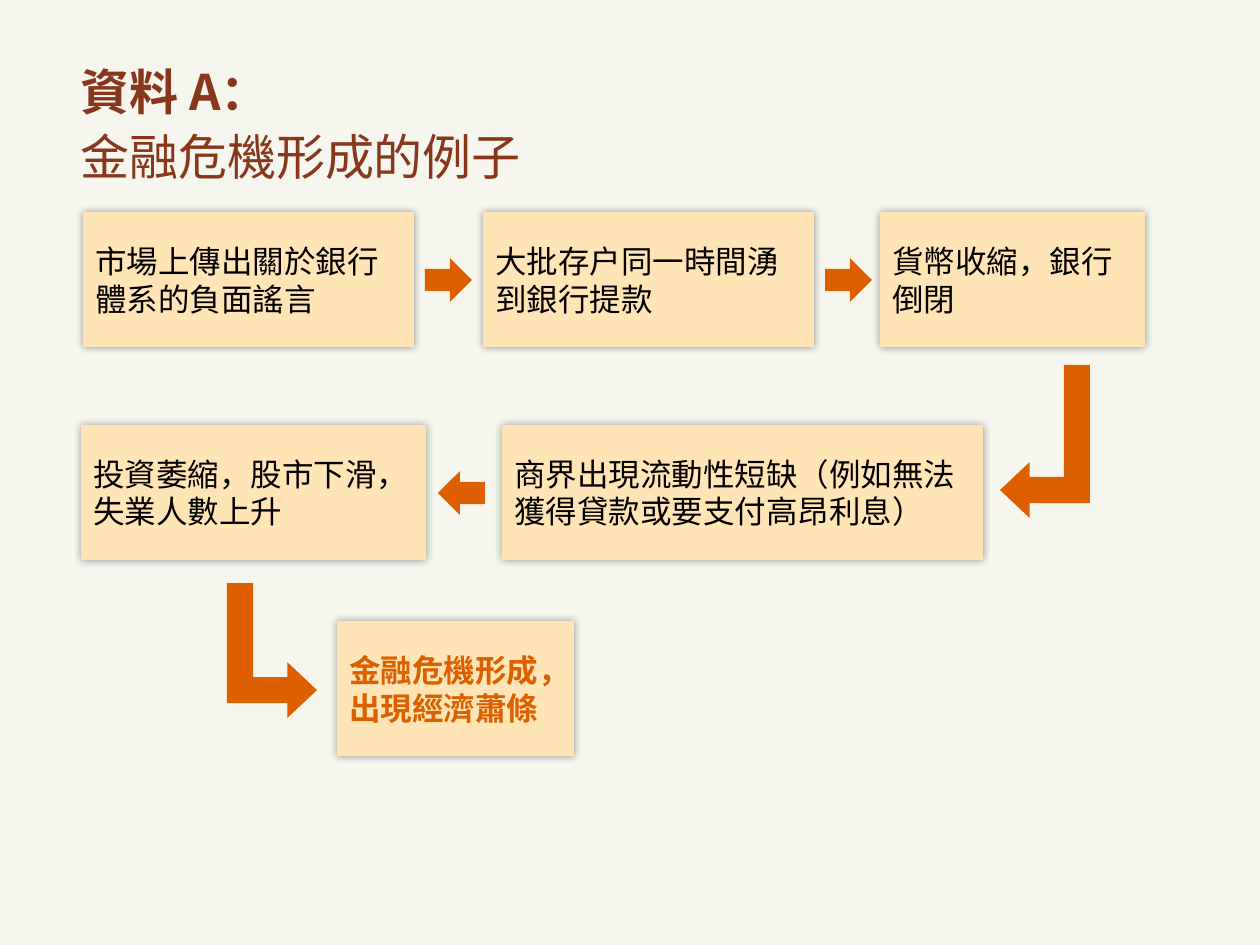
import pptx
import pptx.dml.color
import pptx.enum.shapes
import pptx.enum.text
import pptx.oxml
import pptx.oxml.ns
import pptx.util

FONT = "Noto Sans CJK SC"
ORANGE = "DD5F00"
SHAPES = pptx.enum.shapes.MSO_SHAPE
SHADOW = (
    f'<a:effectLst {pptx.oxml.ns.nsdecls("a")}><a:outerShdw blurRad="63500" dist="0" dir="0">'
    '<a:srgbClr val="000000"><a:alpha val="40000"/></a:srgbClr></a:outerShdw></a:effectLst>'
)


def px(length):
    return pptx.util.Emu(round(length * 914400 / 126))


def color(value):
    return pptx.dml.color.RGBColor.from_string(value)


def add_span(para, text, size=18, fill="000000", bold=False):
    span = para.add_run()
    span.text = text
    span.font.size = pptx.util.Pt(size)
    span.font.name = FONT
    span.font.bold = bold
    span.font.color.rgb = color(fill)
    east_asian = pptx.oxml.parse_xml(f'<a:ea {pptx.oxml.ns.nsdecls("a")} typeface="{FONT}"/>')
    span.font._element.find(pptx.oxml.ns.qn("a:latin")).addnext(east_asian)


def middle_para(box):
    frame = box.text_frame
    frame.word_wrap = True
    frame.vertical_anchor = pptx.enum.text.MSO_ANCHOR.MIDDLE
    para = frame.paragraphs[0]
    para.alignment = pptx.enum.text.PP_ALIGN.LEFT
    return para


def add_filled(page, kind, left, top, width, height, fill):
    shape = page.shapes.add_shape(kind, px(left), px(top), px(width), px(height))
    shape.fill.solid()
    shape.fill.fore_color.rgb = color(fill)
    shape.line.fill.background()
    shape.shadow.inherit = False
    return shape


def add_title(page, left, top, width, height):
    box = page.shapes.add_textbox(px(left), px(top), px(width), px(height))
    para = middle_para(box)
    para.line_spacing = 1.1
    add_span(para, "資料 A： ", size=28, fill="88371D", bold=True)
    para.add_line_break()
    add_span(para, "金融危機形成的例子", size=28, fill="88371D")


def add_step(page, left, top, width, text, **style):
    box = add_filled(page, SHAPES.RECTANGLE, left, top, width, 135, "FFE5B5")
    properties = box._element.spPr
    properties.remove(properties.find(pptx.oxml.ns.qn("a:effectLst")))
    properties.append(pptx.oxml.parse_xml(SHADOW))
    add_span(middle_para(box), text, **style)


def add_arrow(page, left, top, flip=False):
    arrow = add_filled(page, SHAPES.RIGHT_ARROW, left, top, 47, 44, ORANGE)
    if flip:
        arrow._element.spPr.xfrm.set("flipH", "1")


def add_bent_arrow(page, left, top, drop, reach, flip=False):
    offset = (drop - reach) / 2
    arrow = add_filled(page, SHAPES.BENT_UP_ARROW, left - offset, top + offset, drop, reach, ORANGE)
    for index, value in enumerate((0.29, 0.31, 0.33)):
        arrow.adjustments[index] = value
    arrow.rotation = 270 if flip else 90
    if flip:
        arrow._element.spPr.xfrm.set("flipH", "1")


def add_first_row(page, left, top):
    add_step(page, left, top, 331, "市場上傳出關於銀行體系的負面謠言")
    add_step(page, left + 400, top, 331, "大批存户同一時間湧到銀行提款")
    add_step(page, left + 797, top, 265, "貨幣收縮，銀行倒閉")
    for offset in (342, 742):
        add_arrow(page, left + offset, top + 46)


def add_second_row(page, left, top):
    add_step(page, left + 421, top, 481, "商界出現流動性短缺（例如無法獲得貸款或要支付高昂利息）")
    add_step(page, left, top, 345, "投資萎縮，股市下滑，失業人數上升")
    add_arrow(page, left + 357, top + 46, flip=True)
    add_bent_arrow(page, left + 919, top - 60, 153, 90, flip=True)


def add_outcome(page, left, top):
    add_step(page, left, top, 237, "金融危機形成，出現經濟蕭條", fill="DC5F00", bold=True)
    add_bent_arrow(page, left - 110, top - 38, 135, 90)


def main():
    deck = pptx.Presentation()
    deck.slide_width, deck.slide_height = px(1260), px(945)
    page = deck.slides.add_slide(deck.slide_layouts[6])
    page.background.fill.solid()
    page.background.fill.fore_color.rgb = color("F6F5EE")
    add_title(page, 68, 29, 1125, 183)
    add_first_row(page, 83, 212)
    add_second_row(page, 81, 425)
    add_outcome(page, 337, 621)
    deck.save("out.pptx")


if __name__ == "__main__":
    main()
